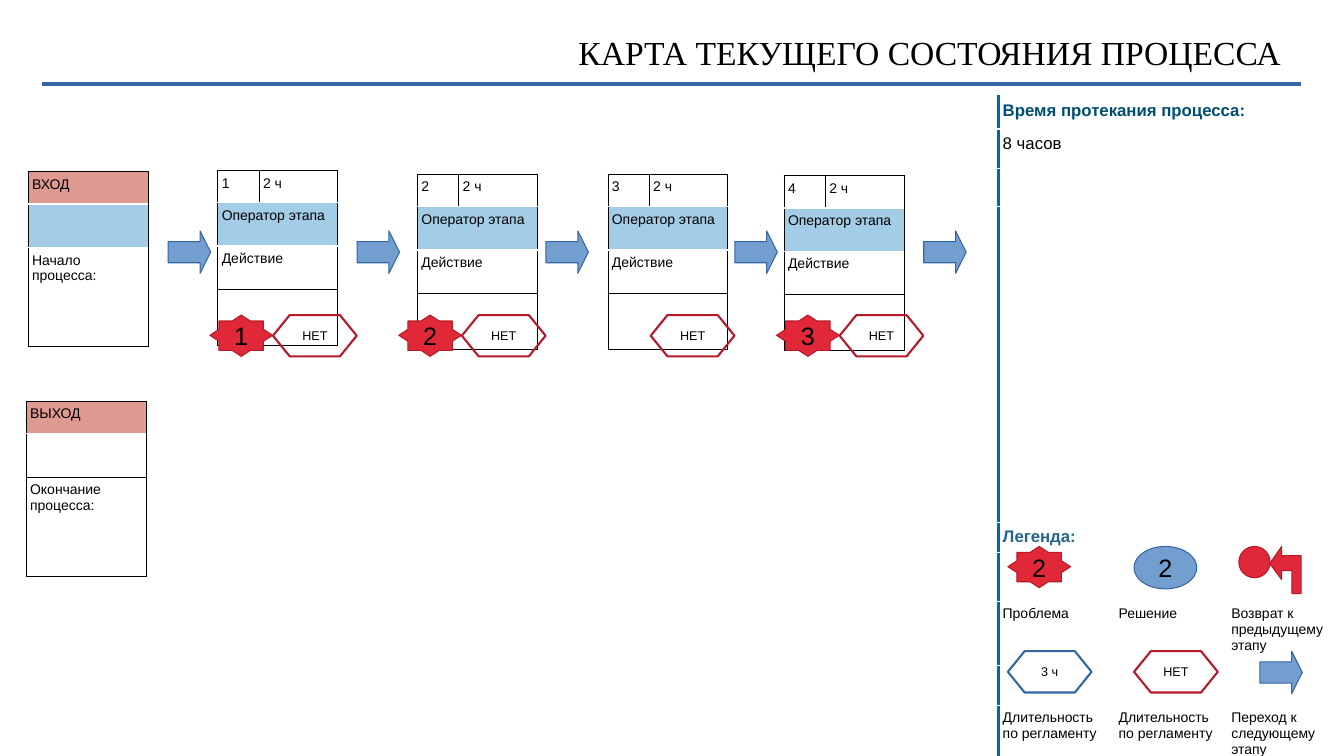
from lxml import etree
from pptx import Presentation
from pptx.dml.color import RGBColor
from pptx.enum.shapes import MSO_CONNECTOR, MSO_SHAPE
from pptx.enum.text import MSO_ANCHOR, PP_ALIGN
from pptx.oxml.ns import qn
from pptx.util import Cm, Pt

COLORS = {
    "black": "000000", "white": "FFFFFF", "divider": "0065AF",
    "blue": "729FCF", "blue_line": "3465A4", "red": "E12839", "red_line": "B6192A",
    "operator": "A3CDE6", "heading": "DE9991", "time": "004D72", "legend": "26648C",
}
BORDER_WIDTHS = {"black": 0.57, "white": 0.96, "divider": 2.55}

# Outlines in hundredths of a centimetre
STAR = [(0, 51), (23, 66), (23, 89), (56, 89), (79, 104), (102, 89), (135, 89), (135, 66),
        (158, 51), (135, 36), (135, 15), (102, 15), (79, 0), (56, 15), (23, 15), (23, 36)]
RETURN_ARROW = [(30, 84), (30, 61), (56, 61), (56, 119), (79, 119), (79, 23),
                (30, 23), (30, 0), (0, 43)]


def add_grid(left, top, widths, heights, rows, fills, edges, left_edge="black", inner_edge="black"):
    """Add a table; a row with one text spans all columns, edges run from top to bottom."""
    frame = slide.shapes.add_table(len(heights), len(widths), Cm(left), Cm(top),
                                   Cm(sum(widths)), Cm(sum(heights)))
    table = frame.table
    table.first_row = table.horz_banding = False
    for column, width in zip(table.columns, widths):
        column.width = Cm(width)
    for r, (height, texts) in enumerate(zip(heights, rows)):
        table.rows[r].height = Cm(height)
        for c in range(len(widths)):
            cell = table.cell(r, c)
            cell.margin_left = cell.margin_right = Cm(0.1)
            cell.margin_top = cell.margin_bottom = Cm(0.13)
            if c < len(texts):
                cell.text = texts[c]
            font = cell.text_frame.paragraphs[0].font
            font.name, font.size, font.bold = "Arial", Pt(10), False
            font.color.rgb = RGBColor.from_string(COLORS["black"])
            sides = {"lnL": inner_edge if c else left_edge, "lnR": inner_edge,
                     "lnT": edges[r], "lnB": edges[r + 1]}
            for side, color in sides.items():
                border = etree.SubElement(cell._tc.get_or_add_tcPr(), qn(f"a:{side}"),
                                          w=str(Pt(BORDER_WIDTHS[color])))
                solid = etree.SubElement(border, qn("a:solidFill"))
                etree.SubElement(solid, qn("a:srgbClr"), val=COLORS[color])
            if fills[r]:
                cell.fill.solid()
                cell.fill.fore_color.rgb = RGBColor.from_string(COLORS[fills[r]])
            else:
                cell.fill.background()
        if len(texts) < len(widths):
            table.cell(r, 0).merge(table.cell(r, len(widths) - 1))
    return table


def style(shape, fill, line, width=0, text="", size=18):
    """Set fill, line and centred text of a shape."""
    shape.shadow.inherit = False
    if fill:
        shape.fill.solid()
        shape.fill.fore_color.rgb = RGBColor.from_string(COLORS[fill])
    else:
        shape.fill.background()
    shape.line.color.rgb = RGBColor.from_string(COLORS[line])
    shape.line.width = Pt(width)
    if text:
        frame = shape.text_frame
        frame.text = text
        frame.vertical_anchor = MSO_ANCHOR.MIDDLE
        paragraph = frame.paragraphs[0]
        paragraph.alignment = PP_ALIGN.CENTER
        paragraph.font.name, paragraph.font.size = "Arial", Pt(size)
        paragraph.font.color.rgb = RGBColor.from_string(COLORS["black"])


presentation = Presentation()
presentation.slide_width, presentation.slide_height = Cm(33.87), Cm(19.05)
slide = presentation.slides.add_slide(presentation.slide_layouts[6])

# Title and rule
rule = slide.shapes.add_connector(MSO_CONNECTOR.STRAIGHT, Cm(1.07), Cm(2.11), Cm(32.79), Cm(2.11))
rule.line.color.rgb = RGBColor.from_string(COLORS["blue_line"])
rule.line.width = Pt(3)
etree.SubElement(rule._element.spPr, qn("a:effectLst"))

title = slide.shapes.add_textbox(Cm(1.8), Cm(0), Cm(30.48), Cm(2.64)).text_frame
title.word_wrap = True
title.vertical_anchor = MSO_ANCHOR.MIDDLE
title.margin_left = title.margin_right = title.margin_top = title.margin_bottom = Cm(0)
title.text = "КАРТА ТЕКУЩЕГО СОСТОЯНИЯ ПРОЦЕССА"
paragraph = title.paragraphs[0]
paragraph.alignment = PP_ALIGN.RIGHT
paragraph.font.name, paragraph.font.size = "Times New Roman", Pt(24)
paragraph.font.color.rgb = RGBColor.from_string(COLORS["black"])

# Side panel with process time and legend
panel_rows = [
    ["Время протекания процесса:"], ["8 часов"], [""], [""], ["Легенда:"], ["", "", ""],
    ["Проблема", "Решение", "Возврат к предыдущему этапу"], ["", "", ""],
    ["Длительность по регламенту", "Длительность по регламенту", "Переход к следующему этапу"],
]
panel = add_grid(25.17, 2.41, [2.92, 2.84, 2.69],
                 [0.84, 0.99, 0.97, 7.95, 0.76, 1.22, 1.63, 0.99, 1.5],
                 panel_rows, [None] * 9, ["white"] * 10, "divider", "white")
for row, color, bold in [(0, "time", True), (1, "black", False), (4, "legend", True)]:
    font = panel.cell(row, 0).text_frame.paragraphs[0].font
    font.size, font.bold = Pt(12), bold
    font.color.rgb = RGBColor.from_string(COLORS[color])

# Process steps
for number, (left, top) in enumerate([(5.49, 4.29), (10.52, 4.39), (15.32, 4.39), (19.76, 4.42)], 1):
    add_grid(left, top, [1.04, 1.98], [0.82, 1.09, 1.09, 1.42],
             [[str(number), "2 ч"], ["Оператор этапа"], ["Действие"], [""]],
             [None, "operator", None, None], ["black", "white", "white", "black", "black"])

# Process input and output
for left, top, texts, middle_fill, lower_edge in [
    (0.71, 4.32, ["ВХОД", "", "Начало процесса:"], "operator", "white"),
    (0.66, 10.11, ["ВЫХОД", "", "Окончание процесса:"], None, "black"),
]:
    add_grid(left, top, [3.02], [0.82, 1.09, 2.51], [[text] for text in texts],
             ["heading", middle_fill, None], ["black", "white", lower_edge, "black"])

# Arrows between steps, and the one in the legend
PITCH = 4.76
for left, top in [(4.24 + PITCH * i, 5.82) for i in range(5)] + [(31.75, 16.41)]:
    arrow = slide.shapes.add_shape(MSO_SHAPE.RIGHT_ARROW, Cm(left), Cm(top), Cm(1.07), Cm(1.07))
    arrow.adjustments[0], arrow.adjustments[1] = 0.5, 0.25
    style(arrow, "blue", "blue_line")

# Duration hexagons
hexagons = [(6.88 + PITCH * i, 7.94, "НЕТ", "red_line") for i in range(4)]
hexagons += [(25.4, 16.41, "3 ч", "blue_line"), (28.58, 16.41, "НЕТ", "red_line")]
for left, top, text, line in hexagons:
    hexagon = slide.shapes.add_shape(MSO_SHAPE.FLOWCHART_PREPARATION, Cm(left), Cm(top), Cm(2.11), Cm(1.04))
    style(hexagon, None, line, 1.5, text, 9)

# Problem stars
stars = [(5.29 + PITCH * i, 7.94, text) for i, text in [(0, "1"), (1, "2"), (3, "3")]]
for left, top, text in stars + [(25.4, 13.77, "2")]:
    builder = slide.shapes.build_freeform(*STAR[0], scale=Cm(0.01))
    builder.add_line_segments(STAR[1:], close=True)
    style(builder.convert_to_shape(Cm(left), Cm(top)), "red", "red_line", text=text)

# Legend: solution and return to the previous step
solution = slide.shapes.add_shape(MSO_SHAPE.OVAL, Cm(28.58), Cm(13.77), Cm(1.58), Cm(1.07))
style(solution, "blue", "blue_line", text="2")

return_sign = slide.shapes.add_group_shape()
circle = return_sign.shapes.add_shape(MSO_SHAPE.OVAL, Cm(31.22), Cm(13.77), Cm(0.79), Cm(0.79))
builder = return_sign.shapes.build_freeform(*RETURN_ARROW[0], scale=Cm(0.01))
builder.add_line_segments(RETURN_ARROW[1:], close=True)
for shape in (circle, builder.convert_to_shape(Cm(32), Cm(13.77))):
    style(shape, "red", "red_line")

presentation.save("out.pptx")
